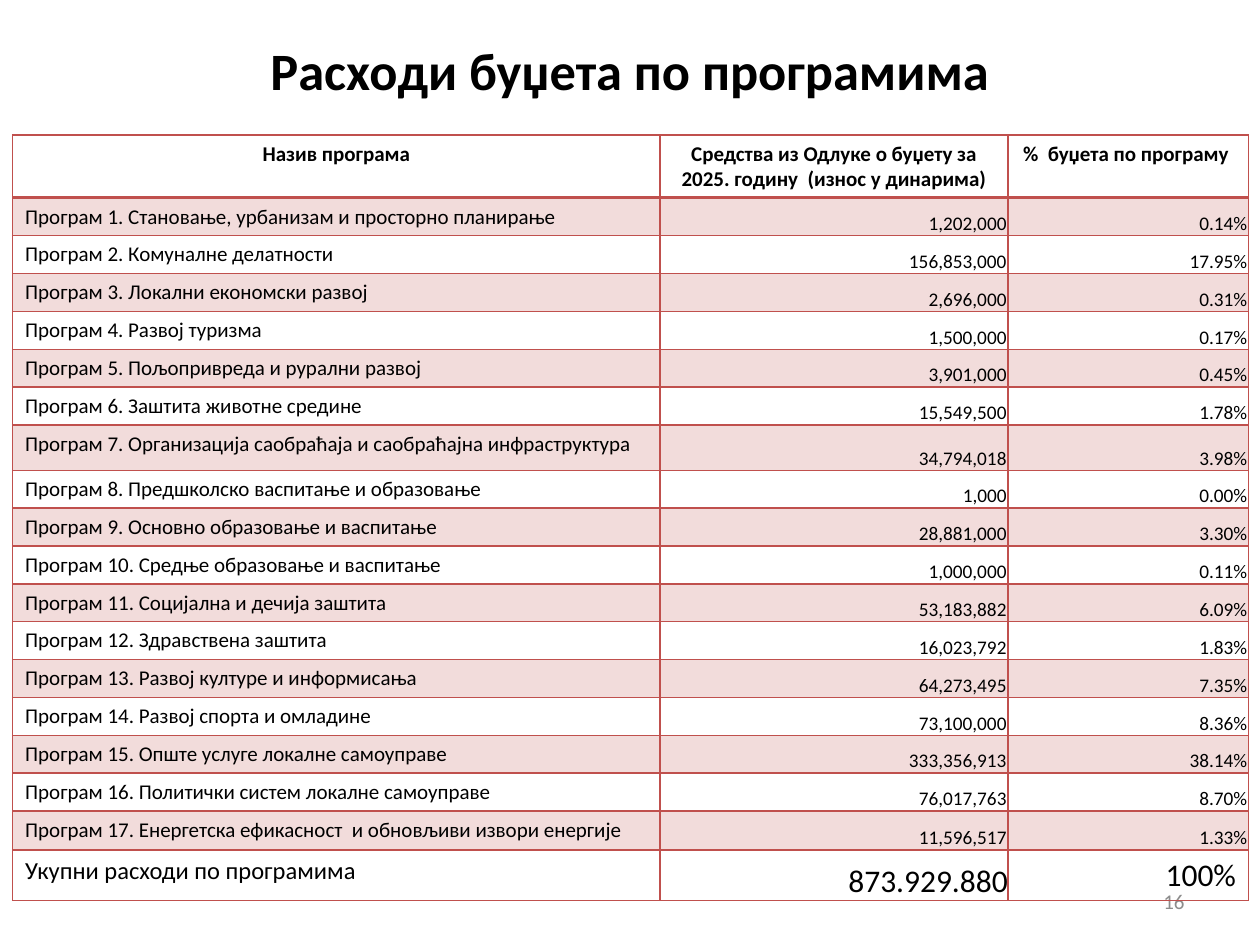
from lxml import etree
from pptx import Presentation
from pptx import util as u
from pptx.dml import color
from pptx.enum import text
from pptx.oxml import ns

RED, BLACK, GREY = "C0504D", "000000", "8C8C8C"
LEFT, CENTER, RIGHT = text.PP_ALIGN.LEFT, text.PP_ALIGN.CENTER, text.PP_ALIGN.RIGHT
TOP, MIDDLE, BOTTOM = text.MSO_ANCHOR.TOP, text.MSO_ANCHOR.MIDDLE, text.MSO_ANCHOR.BOTTOM

HEADINGS = [
    "Назив програма",
    "Средства из Одлуке о буџету за 2025. годину  (износ у динарима)",
    "%  буџета по програму ",
]
PROGRAMS = [
    ("Становање, урбанизам и просторно планирање", "1,202,000", "0.14%"),
    ("Комуналне делатности", "156,853,000", "17.95%"),
    ("Локални економски развој", "2,696,000", "0.31%"),
    ("Развој туризма", "1,500,000", "0.17%"),
    ("Пољопривреда и рурални развој", "3,901,000", "0.45%"),
    ("Заштита животне средине", "15,549,500", "1.78%"),
    ("Организација саобраћаја и саобраћајна инфраструктура", "34,794,018", "3.98%"),
    ("Предшколско васпитање и образовање", "1,000", "0.00%"),
    ("Основно образовање и васпитање", "28,881,000", "3.30%"),
    ("Средње образовање и васпитање", "1,000,000", "0.11%"),
    ("Социјална и дечија заштита", "53,183,882", "6.09%"),
    ("Здравствена заштита", "16,023,792", "1.83%"),
    ("Развој културе и информисања", "64,273,495", "7.35%"),
    ("Развој спорта и омладине", "73,100,000", "8.36%"),
    ("Опште услуге локалне самоуправе", "333,356,913", "38.14%"),
    ("Политички систем локалне самоуправе", "76,017,763", "8.70%"),
    ("Енергетска ефикасност  и обновљиви извори енергије", "11,596,517", "1.33%"),
]
COLUMN_WIDTHS = [5.14, 2.76, 1.91]
ROW_HEIGHTS = [0.49, 0.27] + [0.29] * 5 + [0.36] + [0.29] * 9 + [0.31, 0.39]


def rgb(value):
    return color.RGBColor.from_string(value)


def write(frame, words, size, align, ink=BLACK, bold=False):
    para = frame.paragraphs[0]
    para.alignment = align
    span = para.add_run()
    span.text = words
    span.font.name = "Calibri"
    span.font.size = u.Pt(size)
    span.font.bold = bold
    span.font.color.rgb = rgb(ink)


def add_label(page, box, words, size, align, **style):
    label = page.shapes.add_textbox(*map(u.Inches, box))
    label.text_frame.word_wrap = True
    label.text_frame.vertical_anchor = MIDDLE
    write(label.text_frame, words, size, align, **style)


def set_borders(cell, bottom=1):
    properties = cell._tc.get_or_add_tcPr()
    for index, (side, width) in enumerate(zip("LRTB", (1, 1, 1, bottom))):
        line = etree.Element(ns.qn(f"a:ln{side}"), w=str(u.Pt(width)))
        fill = etree.SubElement(line, ns.qn("a:solidFill"))
        etree.SubElement(fill, ns.qn("a:srgbClr"), val=RED)
        properties.insert(index, line)


def set_fill(cell, tinted):
    if not tinted:
        cell.fill.background()
        return
    cell.fill.solid()
    cell.fill.fore_color.rgb = rgb(RED)
    tint = cell._tc.tcPr.find(".//" + ns.qn("a:srgbClr"))
    etree.SubElement(tint, ns.qn("a:alpha"), val="20000")


def fill_cell(cell, words, size, align, anchor=TOP, inset=None, bold=False, tinted=False, bottom=1):
    cell.vertical_anchor = anchor
    if inset is not None:
        cell.margin_left = cell.margin_right = cell.margin_top = u.Inches(inset)
        cell.margin_bottom = 0
    write(cell.text_frame, words, size, align, bold=bold)
    set_fill(cell, tinted)
    set_borders(cell, bottom)


def add_budget_table(page, box):
    table = page.shapes.add_table(
        len(ROW_HEIGHTS), len(COLUMN_WIDTHS), *map(u.Inches, box)
    ).table
    table.first_row = table.horz_banding = False
    for column, width in zip(table.columns, COLUMN_WIDTHS):
        column.width = u.Inches(width)
    for row, height in zip(table.rows, ROW_HEIGHTS):
        row.height = u.Inches(height)

    for column, heading in enumerate(HEADINGS):
        fill_cell(table.cell(0, column), heading, 12, CENTER, bold=True, bottom=2)

    for number, (name, *figures) in enumerate(PROGRAMS, 1):
        tinted = number % 2 == 1
        fill_cell(table.cell(number, 0), f"Програм {number}. {name}", 12, LEFT, tinted=tinted)
        for column, figure in enumerate(figures, 1):
            fill_cell(table.cell(number, column), figure, 11, RIGHT, BOTTOM, 0.01, tinted=tinted)

    total = len(PROGRAMS) + 1
    fill_cell(table.cell(total, 0), "Укупни расходи по програмима", 14, LEFT)
    fill_cell(table.cell(total, 1), "873.929.880", 18, RIGHT, BOTTOM, 0)
    fill_cell(table.cell(total, 2), "100%", 18, RIGHT)


def main():
    deck = Presentation()
    deck.slide_width, deck.slide_height = u.Inches(10), u.Inches(7.5)
    page = deck.slides.add_slide(deck.slide_layouts[6])
    add_label(page, (0.74, 0.13, 8.52, 0.85), "Расходи буџета по програмима", 30, CENTER, bold=True)
    add_label(page, (7.17, 6.95, 2.33, 0.4), "16", 12, RIGHT, ink=GREY)
    add_budget_table(page, (0.1, 1.07, 9.8, 6.07))
    deck.save("out.pptx")


if __name__ == "__main__":
    main()
